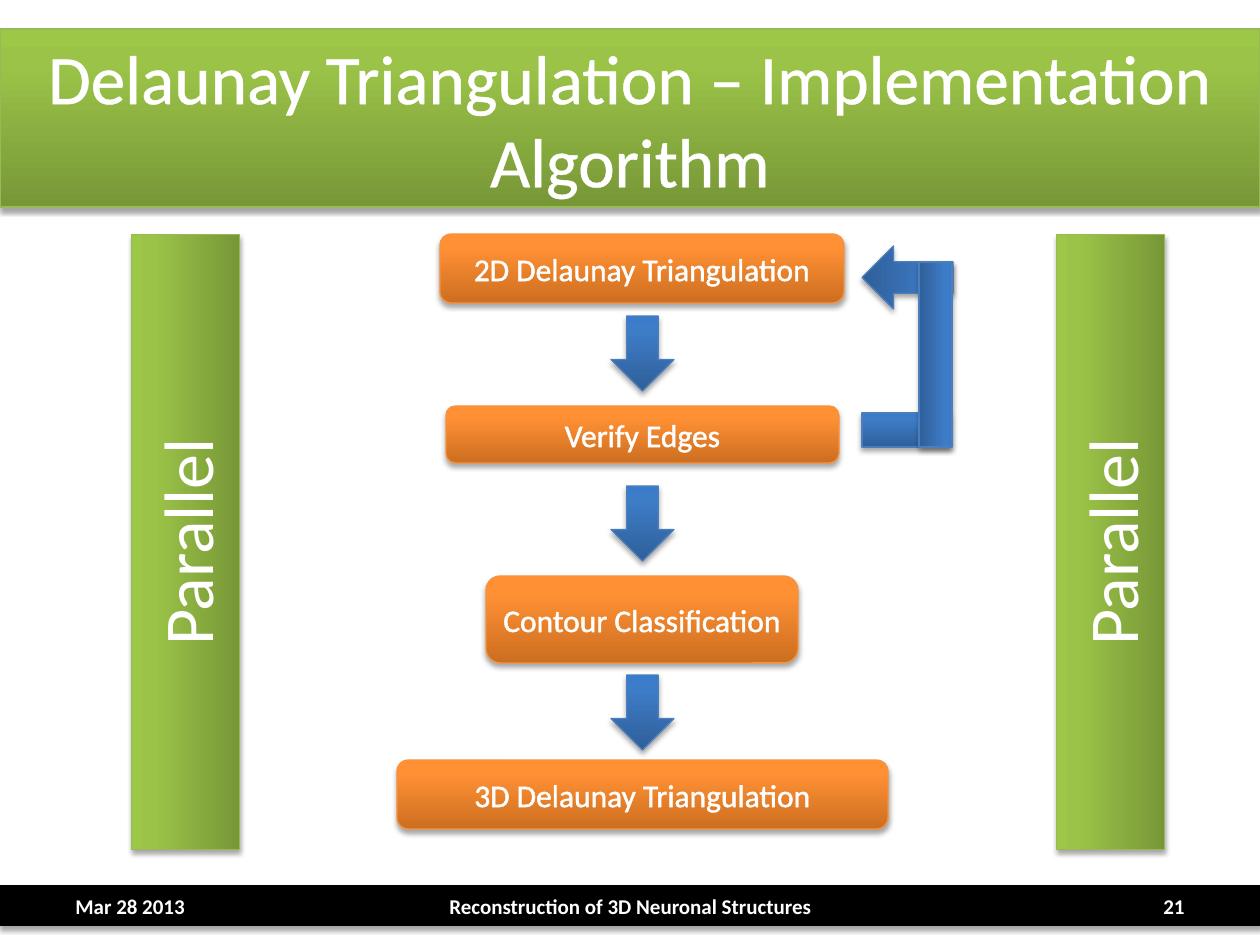
from copy import deepcopy
from dataclasses import dataclass
from typing import Optional

from lxml import etree
from pptx import Presentation
from pptx import util as u
from pptx.dml.color import RGBColor
from pptx.enum import shapes, text
from pptx.oxml import ns

EMU_PER_PX = 914400 / 126
SLIDE_W, SLIDE_H = 1260, 945
FLOW_CENTRE = 642

WHITE = RGBColor(0xFF, 0xFF, 0xFF)
BLACK = RGBColor(0x00, 0x00, 0x00)
SHAPE = shapes.MSO_SHAPE
ALIGN = text.PP_ALIGN


@dataclass(frozen=True)
class Paint:
    colors: tuple[RGBColor, ...]
    line: RGBColor


@dataclass(frozen=True)
class Label:
    words: str
    size: float
    align: ALIGN = ALIGN.CENTER
    bold: bool = False
    outlined: bool = False


@dataclass(frozen=True)
class Block:
    kind: SHAPE
    box: tuple[int, int, int, int]
    paint: Paint
    rotation: int = 0
    label: Optional[Label] = None


# Gradients run from the dark bottom edge to the light top edge
STOPS = (0, 0.8, 1)
GREEN = Paint((RGBColor(0x77, 0x97, 0x37), RGBColor(0x9B, 0xC3, 0x48),
               RGBColor(0x9D, 0xC7, 0x46)), RGBColor(0x98, 0xB9, 0x55))
ORANGE = Paint((RGBColor(0xCC, 0x6E, 0x20), RGBColor(0xFF, 0x90, 0x34),
                RGBColor(0xFF, 0x91, 0x36)), RGBColor(0xF6, 0x92, 0x40))
BLUE = Paint((RGBColor(0x2F, 0x5F, 0x99), RGBColor(0x3D, 0x7C, 0xC7),
              RGBColor(0x3A, 0x7C, 0xCB)), RGBColor(0x4B, 0x7E, 0xBC))
SOLID_BLACK = Paint((BLACK,), BLACK)


def px(length: int) -> u.Emu:
    return u.Emu(round(length * EMU_PER_PX))


def add_child(parent, tag: str, **attributes: str):
    return etree.SubElement(parent, ns.qn(tag), attributes)


def write(shape, label: Label) -> None:
    frame = shape.text_frame
    frame_format = {"word_wrap": True, "auto_size": text.MSO_AUTO_SIZE.NONE,
                    "vertical_anchor": text.MSO_ANCHOR.MIDDLE}
    for name, value in frame_format.items():
        setattr(frame, name, value)
    paragraph = frame.paragraphs[0]
    paragraph.alignment = label.align
    run = paragraph.add_run()
    run.text = label.words
    font_format = {"name": "Calibri", "size": u.Pt(label.size), "bold": label.bold}
    for name, value in font_format.items():
        setattr(run.font, name, value)
    run.font.color.rgb = WHITE
    if label.outlined:
        outline = etree.Element(ns.qn("a:ln"), w=str(u.Pt(1.45)))
        fill = add_child(outline, "a:solidFill")
        add_child(fill, "a:srgbClr", val=str(WHITE))
        run.font._element.insert(0, outline)


def paint_shape(shape, paint: Paint) -> None:
    if len(paint.colors) == 1:
        shape.fill.solid()
        shape.fill.fore_color.rgb = paint.colors[0]
    else:
        shape.fill.gradient()
        shape.fill.gradient_angle = 90
        stop_list = shape._element.spPr.find(".//" + ns.qn("a:gsLst"))
        stop_list.append(deepcopy(stop_list[0]))
        for stop, position, color in zip(shape.fill.gradient_stops, STOPS, paint.colors):
            stop.position = position
            stop.color.rgb = color
    shape.line.color.rgb = paint.line
    shape.line.width = u.Pt(0.75)

    # Soft shadow straight below
    shape.shadow.inherit = False
    effects = shape._element.spPr.find(ns.qn("a:effectLst"))
    shadow = add_child(effects, "a:outerShdw", blurRad=str(u.Pt(3.1)),
                       dist=str(u.Pt(1.8)), dir="5400000", rotWithShape="0")
    shade = add_child(shadow, "a:srgbClr", val=str(BLACK))
    add_child(shade, "a:alpha", val="35000")


def draw_block(parent, block: Block) -> None:
    shape = parent.add_shape(block.kind, *map(px, block.box))
    shape.rotation = block.rotation
    paint_shape(shape, block.paint)
    if block.label:
        write(shape, block.label)


def draw_text(parent, box: tuple[int, int, int, int], label: Label) -> None:
    write(parent.add_textbox(*map(px, box)), label)


def main() -> None:
    deck = Presentation()
    deck.slide_width, deck.slide_height = px(SLIDE_W), px(SLIDE_H)
    canvas = deck.slides.add_slide(deck.slide_layouts[6]).shapes

    # Footer bar and title band
    title_box = (0, 29, SLIDE_W, 178)
    draw_block(canvas, Block(SHAPE.RECTANGLE, (0, 886, SLIDE_W, 39), SOLID_BLACK))
    draw_block(canvas, Block(SHAPE.RECTANGLE, title_box, GREEN))
    footer = [
        (63, 294, "Mar 28 2013", ALIGN.LEFT),
        (431, 399, "Reconstruction of 3D Neuronal Structures", ALIGN.CENTER),
        (903, 294, "21", ALIGN.RIGHT),
    ]
    for left, width, words, align in footer:
        draw_text(canvas, (left, 886, width, 40), Label(words, 12, align, bold=True))
    draw_text(canvas, title_box,
              Label("Delaunay Triangulation – Implementation Algorithm", 39.6, outlined=True))

    # Steps, centred on one axis
    steps = [
        (234, 404, 69, "2D Delaunay Triangulation"),
        (406, 393, 57, "Verify Edges"),
        (576, 312, 87, "Contour Classification"),
        (760, 491, 69, "3D Delaunay Triangulation"),
    ]
    for top, width, height, words in steps:
        box = (FLOW_CENTRE - width // 2, top, width, height)
        draw_block(canvas, Block(SHAPE.ROUNDED_RECTANGLE, box, ORANGE,
                                 label=Label(words, 18, outlined=True)))

    # Arrows between steps
    for top in (316, 486, 675):
        draw_block(canvas, Block(SHAPE.DOWN_ARROW, (611, top, 63, 75), BLUE))

    # Loop from edge check back to the first step
    loop = canvas.add_group_shape().shapes
    for block in (
        Block(SHAPE.RECTANGLE, (862, 413, 89, 34), BLUE),
        Block(SHAPE.DOWN_ARROW, (876, 232, 63, 91), BLUE, 90),
        Block(SHAPE.RECTANGLE, (843, 338, 185, 33), BLUE, 90),
    ):
        draw_block(loop, block)

    # Side pillars
    for left in (-122, 803):
        draw_block(canvas, Block(SHAPE.RECTANGLE, (left, 488, 615, 108), GREEN, 270,
                                 Label("Parallel", 40)))

    deck.save("out.pptx")


if __name__ == "__main__":
    main()
